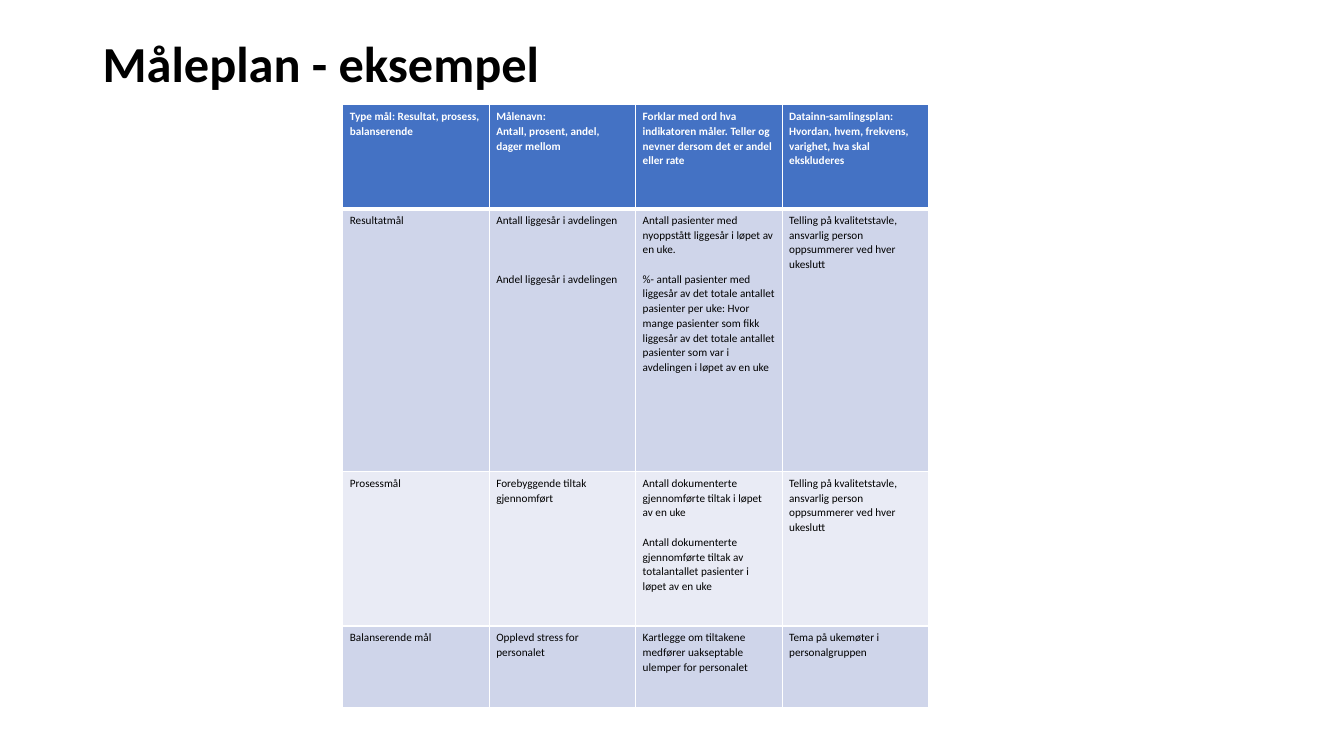
from dataclasses import dataclass
from lxml.etree import SubElement
from pptx import Presentation
from pptx.dml.color import RGBColor
from pptx.enum.text import MSO_ANCHOR
from pptx.oxml.ns import qn
from pptx.util import Inches, Pt


@dataclass(frozen=True)
class Theme:
    font: str = "Calibri"
    title_size: float = 36
    cell_size: float = 8
    title_spacing: float = 0.9
    cell_spacing: float = 1.07
    blank_line: float = 10.5
    black: str = "000000"
    white: str = "FFFFFF"
    header: str = "4472C4"
    bands: tuple = ("CFD5EA", "E9EBF5")
    thin: float = 1
    thick: float = 3


THEME = Theme()

COLLECTION = "Telling på kvalitetstavle, ansvarlig person oppsummerer ved hver ukeslutt"

# Each cell is a list of (text, blank lines above it)
ROWS = [
    [
        [("Type mål: Resultat, prosess, balanserende", 0)],
        [("Målenavn:", 0), ("Antall, prosent, andel, dager mellom", 0)],
        [("Forklar med ord hva indikatoren måler. Teller og nevner "
          "dersom det er andel eller rate", 0)],
        [("Datainn-samlingsplan: Hvordan, hvem, frekvens, varighet, "
          "hva skal ekskluderes", 0)],
    ],
    [
        [("Resultatmål", 0)],
        [("Antall liggesår i avdelingen", 0), ("Andel liggesår i avdelingen", 3)],
        [("Antall pasienter med nyoppstått liggesår i løpet av en uke.", 0),
         ("%- antall pasienter med liggesår av det totale antallet pasienter per uke: "
          "Hvor mange pasienter som fikk liggesår av det totale antallet pasienter "
          "som var i avdelingen i løpet av en uke", 1)],
        [(COLLECTION, 0)],
    ],
    [
        [("Prosessmål", 0)],
        [("Forebyggende tiltak gjennomført", 0)],
        [("Antall dokumenterte gjennomførte tiltak i løpet av en uke", 0),
         ("Antall dokumenterte gjennomførte tiltak av totalantallet pasienter "
          "i løpet av en uke", 1)],
        [(COLLECTION, 0)],
    ],
    [
        [("Balanserende mål", 0)],
        [("Opplevd stress for personalet", 0)],
        [("Kartlegge om tiltakene medfører uakseptable ulemper for personalet", 0)],
        [("Tema på ukemøter i personalgruppen", 0)],
    ],
]
ROW_HEIGHTS = [1.03, 2.61, 1.53, 0.81]


def add_span(para, text, size, color, bold):
    span = para.add_run()
    span.text = text
    span.font.name = THEME.font
    span.font.size = Pt(size)
    span.font.bold = bold
    span.font.color.rgb = RGBColor.from_string(color)


def add_title(page, left, top, width, height):
    box = page.shapes.add_textbox(Inches(left), Inches(top), Inches(width), Inches(height))
    frame = box.text_frame
    frame.word_wrap = True
    frame.vertical_anchor = MSO_ANCHOR.MIDDLE
    para = frame.paragraphs[0]
    para.line_spacing = THEME.title_spacing
    add_span(para, "Måleplan - eksempel", THEME.title_size, THEME.black, True)


def set_borders(cell, top, bottom):
    properties = cell._tc.get_or_add_tcPr()
    widths = {"a:lnL": THEME.thin, "a:lnR": THEME.thin, "a:lnT": top, "a:lnB": bottom}
    for tag, width in widths.items():
        line = SubElement(properties, qn(tag), w=str(Pt(width)))
        fill = SubElement(line, qn("a:solidFill"))
        SubElement(fill, qn("a:srgbClr"), val=THEME.white)


def fill_cell(cell, paragraphs, row):
    is_header = row == 0
    # Borders go before the fill; the header rule is heavier
    set_borders(cell,
                top=THEME.thick if row == 1 else THEME.thin,
                bottom=THEME.thick if is_header else THEME.thin)
    cell.fill.solid()
    background = THEME.header if is_header else THEME.bands[(row - 1) % 2]
    cell.fill.fore_color.rgb = RGBColor.from_string(background)
    cell.margin_left = cell.margin_right = Inches(0.07)
    cell.margin_top = cell.margin_bottom = Inches(0.04)

    # Text
    frame = cell.text_frame
    for index, (text, blank_lines) in enumerate(paragraphs):
        para = frame.add_paragraph() if index else frame.paragraphs[0]
        para.line_spacing = THEME.cell_spacing
        para.space_before = Pt(blank_lines * THEME.blank_line)
        add_span(para, text, THEME.cell_size,
                 THEME.white if is_header else THEME.black, is_header)


def add_plan_table(page, left, top, width):
    columns = len(ROWS[0])
    table = page.shapes.add_table(
        len(ROWS), columns, Inches(left), Inches(top),
        Inches(width), Inches(sum(ROW_HEIGHTS))).table
    for column in table.columns:
        column.width = Inches(width / columns)
    for row, (cells, height) in enumerate(zip(ROWS, ROW_HEIGHTS)):
        table.rows[row].height = Inches(height)
        for column, paragraphs in enumerate(cells):
            fill_cell(table.cell(row, column), paragraphs, row)


def main():
    deck = Presentation()
    deck.slide_width, deck.slide_height = Inches(13.33), Inches(7.5)
    page = deck.slides.add_slide(deck.slide_layouts[6])
    add_title(page, 0.92, 0.4, 11.5, 0.51)
    add_plan_table(page, 3.4, 1.04, 5.81)
    deck.save("out.pptx")


if __name__ == "__main__":
    main()
